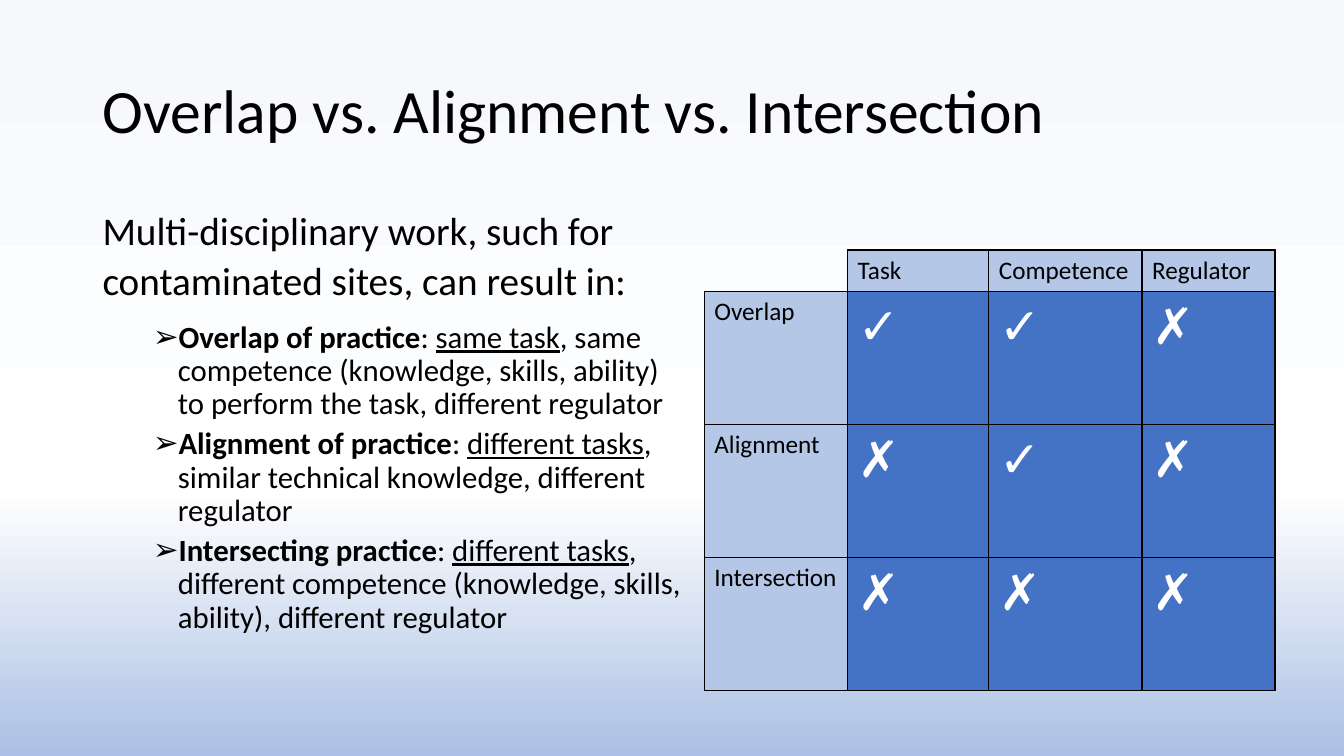
"""Build the slide comparing overlap, alignment and intersection of practice."""
from copy import deepcopy

from lxml.etree import SubElement
from pptx import Presentation
from pptx.dml.color import RGBColor
from pptx.enum.text import MSO_ANCHOR, MSO_AUTO_SIZE, PP_ALIGN
from pptx.oxml.ns import qn
from pptx.util import Cm, Pt

COLORS = {
    "black": "000000", "white": "FFFFFF", "header": "B4C7E7", "mark": "4472C4",
    "sky": "F6F8FC", "horizon": "ABC0E4",
}


def rgb(name):
    return RGBColor.from_string(COLORS[name])


def add_text(p, text, size=22, color="black", bold=False, underline=False):
    r = p.add_run()
    r.text = text
    r.font.name = "Calibri"
    r.font.size = Pt(size)
    r.font.bold = bold
    r.font.underline = underline
    r.font.color.rgb = rgb(color)


prs = Presentation()
prs.slide_width, prs.slide_height = Cm(33.87), Cm(19.05)
s = prs.slides.add_slide(prs.slide_layouts[1])

fill = s.background.fill
fill.gradient()
fill.gradient_angle = 270
stop_list = next(s.element.iter(qn("a:gsLst")))
stop_list.insert(1, deepcopy(stop_list[0]))
for stop, position, color in zip(fill.gradient_stops, (0, 0.65, 1), ("sky", "white", "horizon")):
    stop.position = position
    stop.color.rgb = rgb(color)

title, body = s.shapes.title, s.placeholders[1]
title.left, title.top, title.width, title.height = Cm(2.33), Cm(1.01), Cm(29.21), Cm(3.68)
body.left, body.top, body.width, body.height = Cm(2.33), Cm(4.98), Cm(15.2), Cm(12.24)
for sp, anchor in ((title, MSO_ANCHOR.MIDDLE), (body, MSO_ANCHOR.TOP)):
    sp.text_frame.word_wrap = True
    sp.text_frame.auto_size = MSO_AUTO_SIZE.NONE
    sp.text_frame.vertical_anchor = anchor

p = title.text_frame.paragraphs[0]
p.alignment = PP_ALIGN.LEFT
p.line_spacing = 0.9
add_text(p, "Overlap vs. Alignment vs. Intersection", size=44)

tf = body.text_frame
p = tf.paragraphs[0]
p.line_spacing, p.space_before, p.space_after = 1.07, Pt(10), Pt(8)
pPr = p._p.get_or_add_pPr()
pPr.set("marL", "0")
pPr.set("indent", "0")
SubElement(pPr, qn("a:buNone"))
add_text(p, "Multi-disciplinary work, such for contaminated sites, can result in:", size=28)

practices = [
    ("Overlap of practice", "same task",
     ", same competence (knowledge, skills, ability) to perform the task, different regulator"),
    ("Alignment of practice", "different tasks",
     ", similar technical knowledge, different regulator"),
    ("Intersecting practice", "different tasks",
     ", different competence (knowledge, skills, ability), different regulator"),
]
for practice, task, rest in practices:
    p = tf.add_paragraph()
    p.level = 1
    p.line_spacing, p.space_before, p.space_after = 0.9, Pt(5), Pt(0)
    pPr = p._p.get_or_add_pPr()
    pPr.set("marL", str(Cm(1.9)))
    pPr.set("indent", str(-Cm(0.63)))
    SubElement(pPr, qn("a:buChar"), char="➢")
    add_text(p, practice, bold=True)
    add_text(p, ": ")
    add_text(p, task, underline=True)
    add_text(p, rest)

rows = [
    ("", "Task", "Competence", "Regulator"),
    ("Overlap", "✓", "✓", "✗"),
    ("Alignment", "✗", "✓", "✗"),
    ("Intersection", "✗", "✗", "✗"),
]
widths = [3.61, 3.56, 3.86, 3.35]
heights = [1.04, 3.35, 3.35, 3.35]
table = s.shapes.add_table(
    4, 4, Cm(17.75), Cm(6.3), Cm(sum(widths)), Cm(sum(heights))).table
table.first_row = table.horz_banding = False
for column, width in zip(table.columns, widths):
    column.width = Cm(width)
for row, height in zip(table.rows, heights):
    row.height = Cm(height)

for i, row in enumerate(rows):
    for j, text in enumerate(row):
        cell = table.cell(i, j)
        is_header = i == 0 or j == 0
        tcPr = cell._tc.get_or_add_tcPr()
        for side in "LRTB":
            line = SubElement(tcPr, qn(f"a:ln{side}"), w=str(Pt(1)))
            if text or side in "RB":
                solid = SubElement(line, qn("a:solidFill"))
                SubElement(solid, qn("a:srgbClr"), val=COLORS["black"])
            else:
                SubElement(line, qn("a:noFill"))
        if not text:
            cell.fill.background()
            continue
        cell.fill.solid()
        cell.fill.fore_color.rgb = rgb("header" if is_header else "mark")
        add_text(cell.text_frame.paragraphs[0], text,
                 size=18 if is_header else 36,
                 color="black" if is_header else "white")

prs.save("out.pptx")
